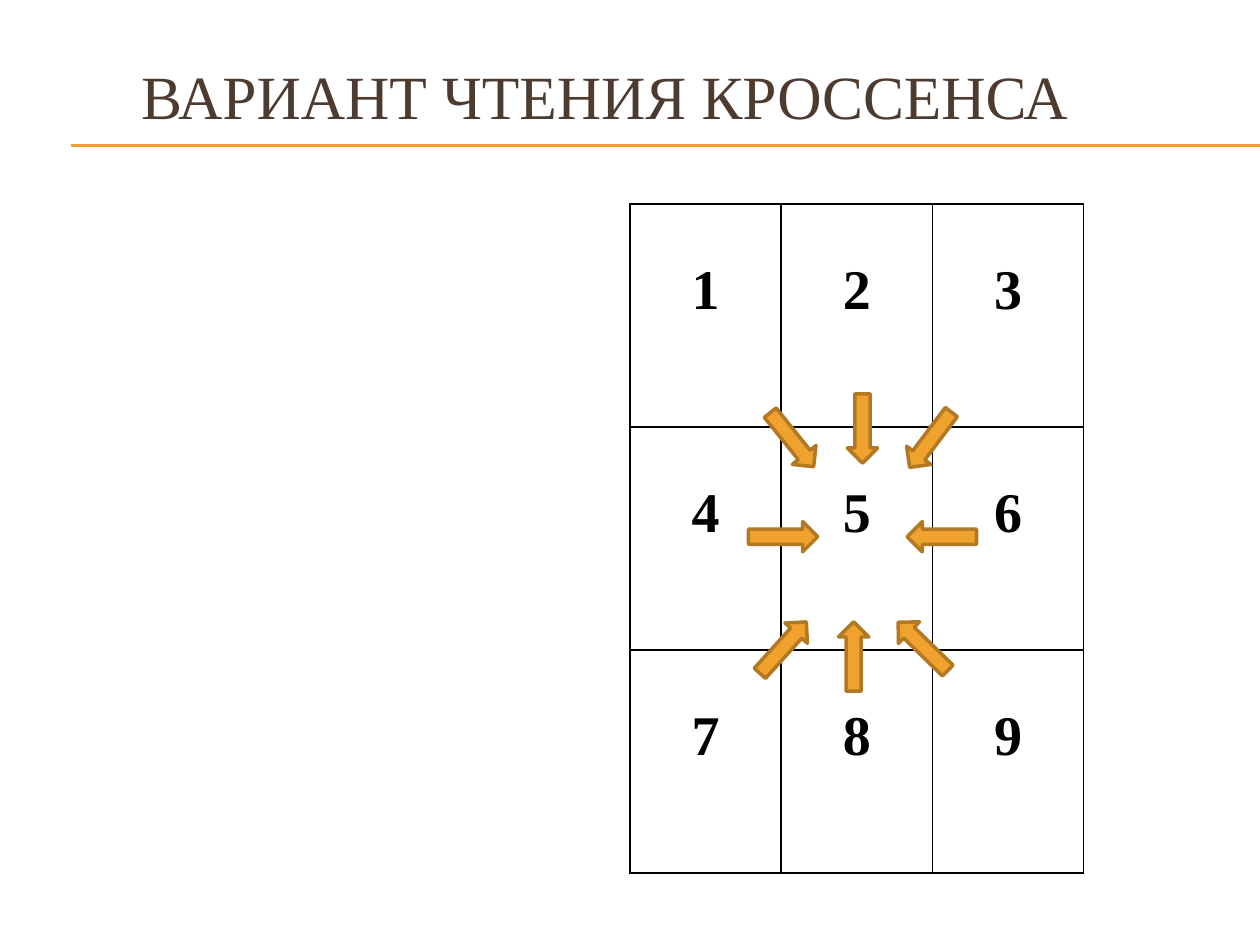
from lxml import etree
from pptx import Presentation
from pptx.dml.color import RGBColor
from pptx.enum import shapes, text
from pptx.oxml import ns
from pptx.util import Inches, Pt

TITLE = "ВАРИАНТ ЧТЕНИЯ КРОССЕНСА"
FONT = "Times New Roman"
GRID = [["1", "2", "3"], ["4", "5", "6"], ["7", "8", "9"]]
COL, ROW = 1.2, 1.77
# left, top, rotation of each arrow pointing at the middle cell
ARROWS = [
    (6.01, 3.37, 51.2), (6.5, 5.09, 270), (5.94, 4.14, 0), (7.2, 4.14, 180),
    (7.11, 3.37, 127), (6.57, 3.28, 90), (7.05, 5.01, 224.3), (5.94, 5.02, 312.1),
]
RULES = [1.15, 1.16]


def rgb(code):
    return RGBColor.from_string(code)


def style(par, size, color, bold=False):
    par.alignment = text.PP_ALIGN.CENTER
    font = par.runs[0].font
    font.name, font.size, font.bold = FONT, Pt(size), bold
    font.color.rgb = rgb(color)


def border(cell):
    """Draw a thin black line on all four sides of a cell."""
    props = cell._tc.get_or_add_tcPr()
    for i, side in enumerate(("lnL", "lnR", "lnT", "lnB")):
        line = etree.Element(ns.qn("a:" + side), w=str(Pt(1)))
        fill = etree.SubElement(line, ns.qn("a:solidFill"))
        etree.SubElement(fill, ns.qn("a:srgbClr"), val="000000")
        props.insert(i, line)


prs = Presentation()
prs.slide_width, prs.slide_height = Inches(10), Inches(7.5)
slide = prs.slides.add_slide(prs.slide_layouts[5])

for y in RULES:
    rule = slide.shapes.add_connector(
        shapes.MSO_CONNECTOR.STRAIGHT, Inches(0.56), Inches(y), Inches(10), Inches(y))
    rule.line.color.rgb = rgb("F0A22E")
    rule.line.width = Pt(0.75)
    etree.SubElement(rule._element.spPr, ns.qn("a:effectLst"))

table = slide.shapes.add_table(
    3, 3, Inches(5), Inches(1.62), Inches(3 * COL), Inches(3 * ROW)).table
table.first_row = table.horz_banding = False
for col in table.columns:
    col.width = Inches(COL)
for r, row in enumerate(GRID):
    table.rows[r].height = Inches(ROW)
    for c, label in enumerate(row):
        cell = table.cell(r, c)
        cell.fill.background()
        border(cell)
        cell.margin_left = cell.margin_right = Inches(0.07)
        cell.margin_top, cell.margin_bottom = Inches(0.44), 0
        cell.text_frame.text = label
        style(cell.text_frame.paragraphs[0], 32, "000000", True)

for x, y, turn in ARROWS:
    arrow = slide.shapes.add_shape(
        shapes.MSO_SHAPE.RIGHT_ARROW, Inches(x), Inches(y), Inches(0.55), Inches(0.24))
    arrow.rotation = turn
    arrow.shadow.inherit = False
    arrow.fill.solid()
    arrow.fill.fore_color.rgb = rgb("F0A22E")
    arrow.line.color.rgb = rgb("B27822")
    arrow.line.width = Pt(2)

title = slide.shapes.title
title.left, title.top = Inches(0.35), Inches(0.29)
title.width, title.height = Inches(8.9), Inches(0.92)
frame = title.text_frame
frame.text = TITLE
frame.word_wrap = True
frame.auto_size = text.MSO_AUTO_SIZE.NONE
frame.vertical_anchor = text.MSO_ANCHOR.MIDDLE
style(frame.paragraphs[0], 35.1, "4E3B30")

prs.save("out.pptx")
